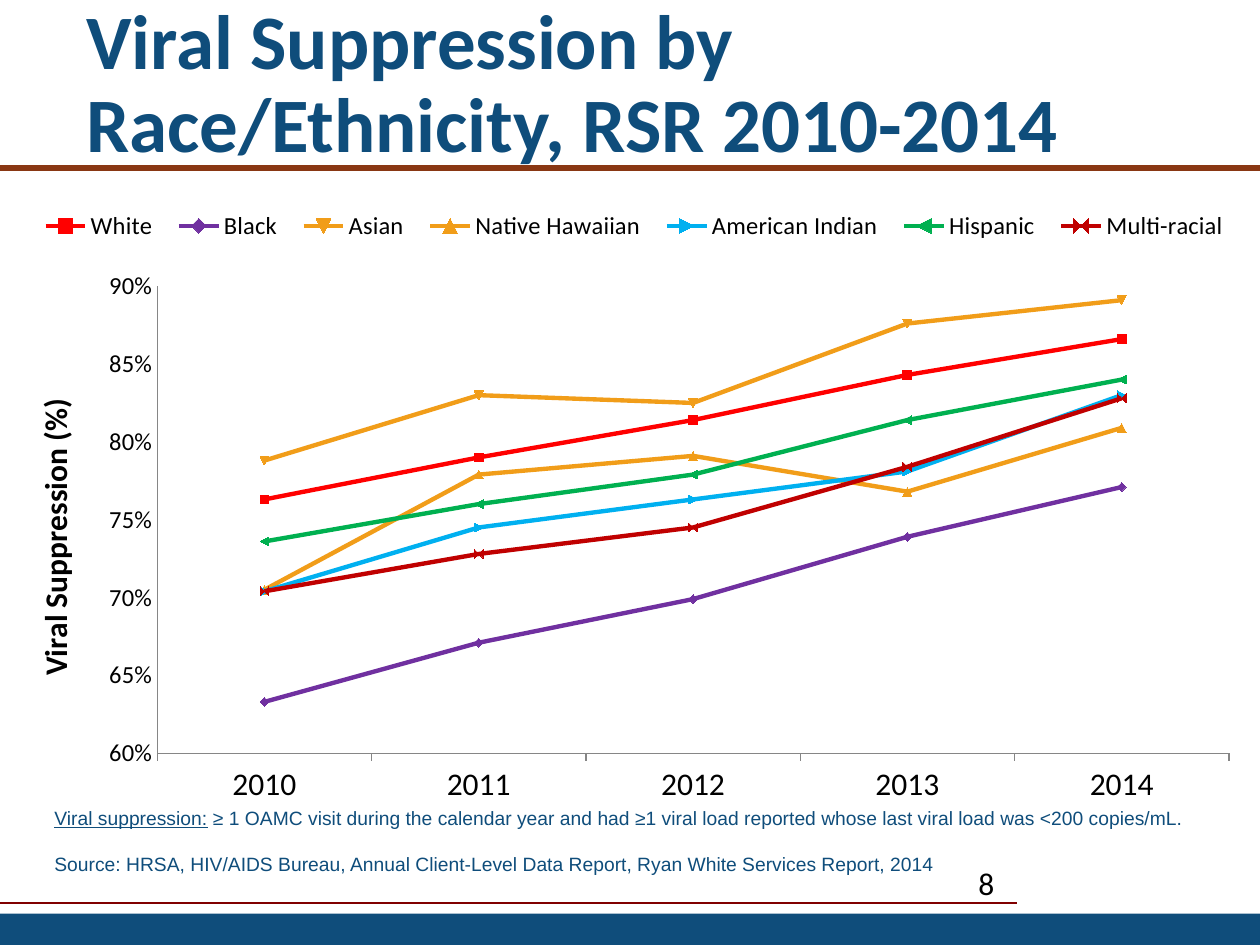
from lxml import etree
from pptx import Presentation
from pptx import util as u
from pptx.chart import data
from pptx.dml.color import RGBColor
from pptx.enum import chart as ch, shapes, text
from pptx.oxml import ns, parse_xml

Pt = u.Pt
NAVY = RGBColor(0x0F, 0x4D, 0x7B)
RUST = RGBColor(0x89, 0x37, 0x13)
MAROON = RGBColor(0x80, 0x00, 0x00)
BLACK = RGBColor(0, 0, 0)
GRAY = RGBColor(0x86, 0x86, 0x86)
RED = RGBColor(0xFF, 0, 0)
PURPLE = RGBColor(0x70, 0x30, 0xA0)
ORANGE = RGBColor(0xF1, 0x9D, 0x19)
SKY = RGBColor(0, 0xB0, 0xF0)
GREEN = RGBColor(0, 0xB0, 0x50)
CRIMSON = RGBColor(0xC0, 0, 0)

YEARS = ["2010", "2011", "2012", "2013", "2014"]
SERIES = [
    ("White", RED, (0.763, 0.79, 0.814, 0.843, 0.866)),
    ("Black", PURPLE, (0.633, 0.671, 0.699, 0.739, 0.771)),
    ("Asian", ORANGE, (0.788, 0.83, 0.825, 0.876, 0.891)),
    ("Native Hawaiian", ORANGE, (0.705, 0.779, 0.791, 0.768, 0.809)),
    ("American Indian", SKY, (0.704, 0.745, 0.763, 0.781, 0.83)),
    ("Hispanic", GREEN, (0.736, 0.76, 0.779, 0.814, 0.84)),
    ("Multi-racial", CRIMSON, (0.704, 0.728, 0.745, 0.784, 0.828)),
]
PLOT_PERCENT = {"x": 11, "y": 20.3, "w": 86.5, "h": 68.1}
LEGEND_PERCENT = {"x": 0.5, "y": 8, "w": 98, "h": 7}


def assign(obj, values):
    for name, value in values.items():
        setattr(obj, name, value)


class Deck:
    HEADING = {"name": "Calibri", "size": Pt(44), "bold": True}
    NOTE = {"name": "Arial", "size": Pt(11)}
    NUMBER = {"name": "Calibri", "size": Pt(18)}
    CHART = {"name": "Calibri", "size": Pt(18), "bold": False}
    SMALL = {"name": "Calibri", "size": Pt(14)}
    AXIS_TITLE = {"name": "Calibri", "size": Pt(18), "bold": True}

    def __init__(self, width, height):
        self.prs = Presentation()
        assign(self.prs, {"slide_width": Pt(width), "slide_height": Pt(height)})
        self.s = self.prs.slides.add_slide(self.prs.slide_layouts[5])

    def font(self, font, style, color):
        assign(font, style)
        font.color.rgb = color

    def title(self, words, x, y, w, h):
        sp = self.s.shapes.title
        assign(sp, {"left": Pt(x), "top": Pt(y), "width": Pt(w), "height": Pt(h)})
        tf = sp.text_frame
        assign(tf, {"vertical_anchor": text.MSO_ANCHOR.MIDDLE, "word_wrap": True,
                    "auto_size": text.MSO_AUTO_SIZE.NONE})
        p = tf.paragraphs[0]
        p.text = words
        assign(p, {"alignment": text.PP_ALIGN.LEFT, "line_spacing": 0.9})
        for r in p.runs:
            self.font(r.font, self.HEADING, NAVY)

    def text(self, paragraphs, x, y, w, h, style, color, gap=0):
        tf = self.s.shapes.add_textbox(Pt(x), Pt(y), Pt(w), Pt(h)).text_frame
        tf.word_wrap = True
        for i, runs in enumerate(paragraphs):
            p = tf.add_paragraph() if i else tf.paragraphs[0]
            if i:
                p.space_before = Pt(gap)
            for words, extra in runs:
                r = p.add_run()
                r.text = words
                self.font(r.font, {**style, **extra}, color)

    def bar(self, x, y, w, h, color):
        sp = self.s.shapes.add_shape(shapes.MSO_SHAPE.RECTANGLE, Pt(x), Pt(y), Pt(w), Pt(h))
        sp.shadow.inherit = False
        sp.fill.solid()
        sp.fill.fore_color.rgb = color
        sp.line.fill.background()

    def rule(self, x1, x2, y, color, width):
        cx = self.s.shapes.add_connector(shapes.MSO_CONNECTOR.STRAIGHT, Pt(x1), Pt(y), Pt(x2), Pt(y))
        cx.line.color.rgb = color
        cx.line.width = Pt(width)
        etree.SubElement(cx._element.spPr, ns.qn("a:effectLst"))

    def line_chart(self, categories, series, axis_title, x, y, w, h):
        cd = data.CategoryChartData(number_format="0%")
        cd.categories = categories
        for name, _, values in series:
            cd.add_series(name, values)
        chart = self.s.shapes.add_chart(
            ch.XL_CHART_TYPE.LINE_MARKERS, Pt(x), Pt(y), Pt(w), Pt(h), cd).chart
        self.font(chart.font, self.CHART, BLACK)
        assign(chart, {"has_title": False, "has_legend": True})
        assign(chart.legend, {"position": ch.XL_LEGEND_POSITION.TOP, "include_in_layout": False})
        self.font(chart.legend.font, self.SMALL, BLACK)
        plot = chart.plots[0]
        plot.vary_by_categories = False
        for line, (_, color, _) in zip(plot.series, series):
            line.smooth = False
            line.format.line.color.rgb = color
            line.format.line.width = Pt(2.5)
            line.marker.size = 5
            line.marker.format.fill.solid()
            line.marker.format.fill.fore_color.rgb = color
            line.marker.format.line.color.rgb = color
        cat, val = chart.category_axis, chart.value_axis
        assign(cat, {"major_tick_mark": ch.XL_TICK_MARK.OUTSIDE, "has_major_gridlines": False})
        assign(val, {"minimum_scale": 0.6, "maximum_scale": 0.9, "major_unit": 0.05,
                     "major_tick_mark": ch.XL_TICK_MARK.NONE, "has_major_gridlines": False,
                     "has_title": True})
        for axis in (cat, val):
            axis.format.line.color.rgb = GRAY
            axis.format.line.width = Pt(0.75)
        self.font(val.tick_labels.font, self.SMALL, BLACK)
        assign(val.tick_labels, {"number_format": "0%", "number_format_is_linked": False})
        p = val.axis_title.text_frame.paragraphs[0]
        r = p.add_run()
        r.text = axis_title
        self.font(r.font, self.AXIS_TITLE, BLACK)
        self.place(chart._chartSpace.chart.plotArea, 0, PLOT_PERCENT, '<c:layoutTarget val="inner"/>')
        self.place(chart.legend._element, 1, LEGEND_PERCENT)

    def place(self, part, index, percent, target=""):
        for old in part.findall(ns.qn("c:layout")):
            part.remove(old)
        modes = '<c:xMode val="edge"/><c:yMode val="edge"/>'
        sizes = "".join(f'<c:{k} val="{v / 100:.3f}"/>' for k, v in percent.items())
        part.insert(index, parse_xml(
            f'<c:layout {ns.nsdecls("c")}><c:manualLayout>{target}{modes}{sizes}'
            '</c:manualLayout></c:layout>'))


def main():
    deck = Deck(720, 540)
    deck.rule(0, 581, 516, MAROON, 1.5)
    deck.bar(0, 522, 720, 18, NAVY)
    deck.line_chart(YEARS, SERIES, "Viral Suppression (%)", 12, 84, 708, 392)
    deck.title("Viral Suppression by\vRace/Ethnicity, RSR 2010-2014", 42, 20, 624, 58)
    definition = [
        ("Viral suppression:", {"underline": True}),
        (" ≥ 1 OAMC visit during the calendar year and had ≥1 viral load reported "
         "whose last viral load was <200 copies/mL.", {}),
    ]
    source = [("Source: HRSA, HIV/AIDS Bureau, Annual Client-Level Data Report, "
               "Ryan White Services Report, 2014", {})]
    deck.text([definition, source], 24, 457, 687, 48, Deck.NOTE, NAVY, gap=13)
    deck.rule(0, 720, 96, RUST, 3)
    deck.text([[("8", {})]], 552, 490, 162, 29, Deck.NUMBER, BLACK)
    deck.prs.save("out.pptx")


if __name__ == "__main__":
    main()
